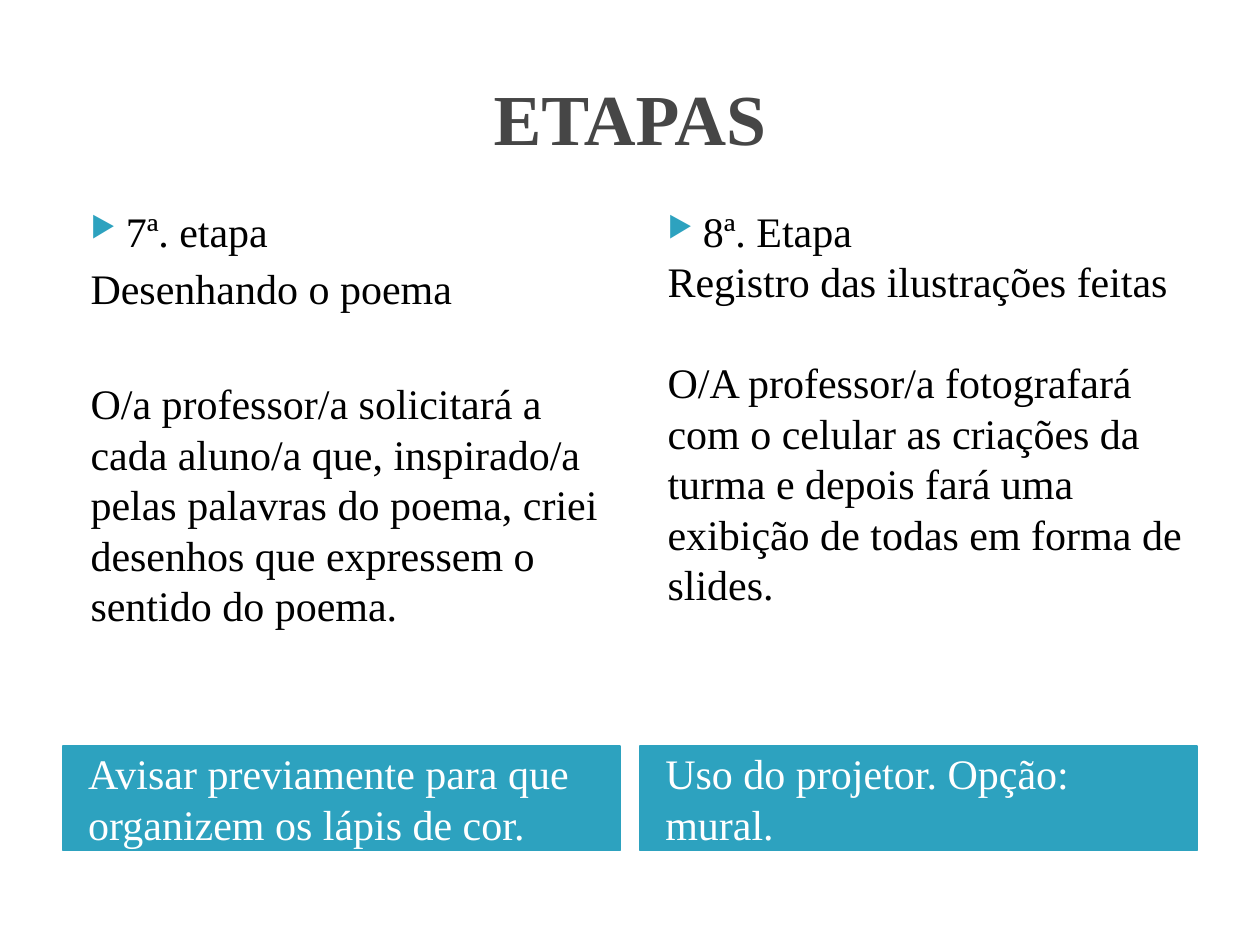
from lxml.etree import SubElement
from pptx import Presentation
from pptx.dml.color import RGBColor
from pptx.enum.shapes import MSO_SHAPE as Shape
from pptx.enum.text import MSO_ANCHOR as Anchor, PP_ALIGN as Align
from pptx.oxml.ns import qn
from pptx.util import Inches, Pt

TITLE = "ETAPAS"
# paragraph_gap and body_gap are the points before the subject and the body
STAGES = [
    {
        "heading": "7ª. etapa",
        "subject": "Desenhando o poema",
        "body": "O/a professor/a solicitará a cada aluno/a que, inspirado/a pelas "
                "palavras do poema, criei desenhos que expressem o sentido do poema.",
        "note": "Avisar previamente para que organizem os lápis de cor.",
        "paragraph_gap": 4,
        "body_gap": 37,
    },
    {
        "heading": "8ª. Etapa",
        "subject": "Registro das ilustrações feitas",
        "body": "O/A professor/a fotografará com o celular as criações da turma e "
                "depois fará uma exibição de todas em forma de slides.",
        "note": "Uso do projetor. Opção: mural.",
        "paragraph_gap": 0,
        "body_gap": 29,
    },
]

THEME = {
    "font": "Times New Roman",
    "title_size": 41,
    "text_size": 24,
    "title": RGBColor.from_string("464646"),
    "text": RGBColor.from_string("000000"),
    "accent": RGBColor.from_string("2DA2BF"),
    "on_accent": RGBColor.from_string("FFFFFF"),
}

MARGIN, COLUMN_WIDTH, COLUMN_GAP = 0.5, 4.42, 0.16
TEXT_TOP, TEXT_HEIGHT = 1.58, 4.31
NOTE_TOP, NOTE_HEIGHT = 5.92, 0.83


def add_span(para, text, color, size=THEME["text_size"], bold=False):
    span = para.add_run()
    span.text = text
    span.font.name = THEME["font"]
    span.font.size = Pt(size)
    span.font.bold = bold
    span.font.color.rgb = color


def set_indent(para, left, first=0):
    properties = para._p.get_or_add_pPr()
    properties.set("marL", str(Inches(left)))
    properties.set("indent", str(Inches(first)))
    return properties


def add_bullet(para):
    properties = set_indent(para, 0.4, -0.28)
    color = SubElement(properties, qn("a:buClr"))
    SubElement(color, qn("a:srgbClr"), val=str(THEME["accent"]))
    SubElement(properties, qn("a:buSzPct"), val="68000")
    SubElement(properties, qn("a:buChar"), char="▶")


def add_stage_text(page, left, stage):
    box = page.shapes.add_textbox(
        Inches(left), Inches(TEXT_TOP), Inches(COLUMN_WIDTH), Inches(TEXT_HEIGHT))
    frame = box.text_frame
    frame.word_wrap = True
    heading = frame.paragraphs[0]
    add_bullet(heading)
    add_span(heading, stage["heading"], THEME["text"])
    for part, gap in (("subject", "paragraph_gap"), ("body", "body_gap")):
        para = frame.add_paragraph()
        set_indent(para, 0.12)
        para.space_before = Pt(stage[gap])
        add_span(para, stage[part], THEME["text"])


def add_note(page, left, text):
    bar = page.shapes.add_shape(
        Shape.RECTANGLE, Inches(left), Inches(NOTE_TOP),
        Inches(COLUMN_WIDTH), Inches(NOTE_HEIGHT))
    bar.shadow.inherit = False
    bar.fill.solid()
    bar.fill.fore_color.rgb = THEME["accent"]
    bar.line.color.rgb = THEME["accent"]
    bar.line.width = Pt(0.75)
    frame = bar.text_frame
    frame.word_wrap = True
    frame.vertical_anchor = Anchor.MIDDLE
    frame.margin_left = Inches(0.2)
    para = frame.paragraphs[0]
    para.alignment = Align.LEFT
    add_span(para, text, THEME["on_accent"])


def add_title(page):
    title = page.shapes.title
    title.left, title.top = Inches(MARGIN), Inches(0.3)
    title.width, title.height = Inches(9), Inches(1.25)
    title.text_frame.vertical_anchor = Anchor.MIDDLE
    para = title.text_frame.paragraphs[0]
    para.alignment = Align.CENTER
    add_span(para, TITLE, THEME["title"], THEME["title_size"], bold=True)


def main():
    deck = Presentation()
    deck.slide_width, deck.slide_height = Inches(10), Inches(7.5)
    page = deck.slides.add_slide(deck.slide_layouts[5])
    add_title(page)
    for index, stage in enumerate(STAGES):
        left = MARGIN + index * (COLUMN_WIDTH + COLUMN_GAP)
        add_note(page, left, stage["note"])
        add_stage_text(page, left, stage)
    deck.save("out.pptx")


if __name__ == "__main__":
    main()
